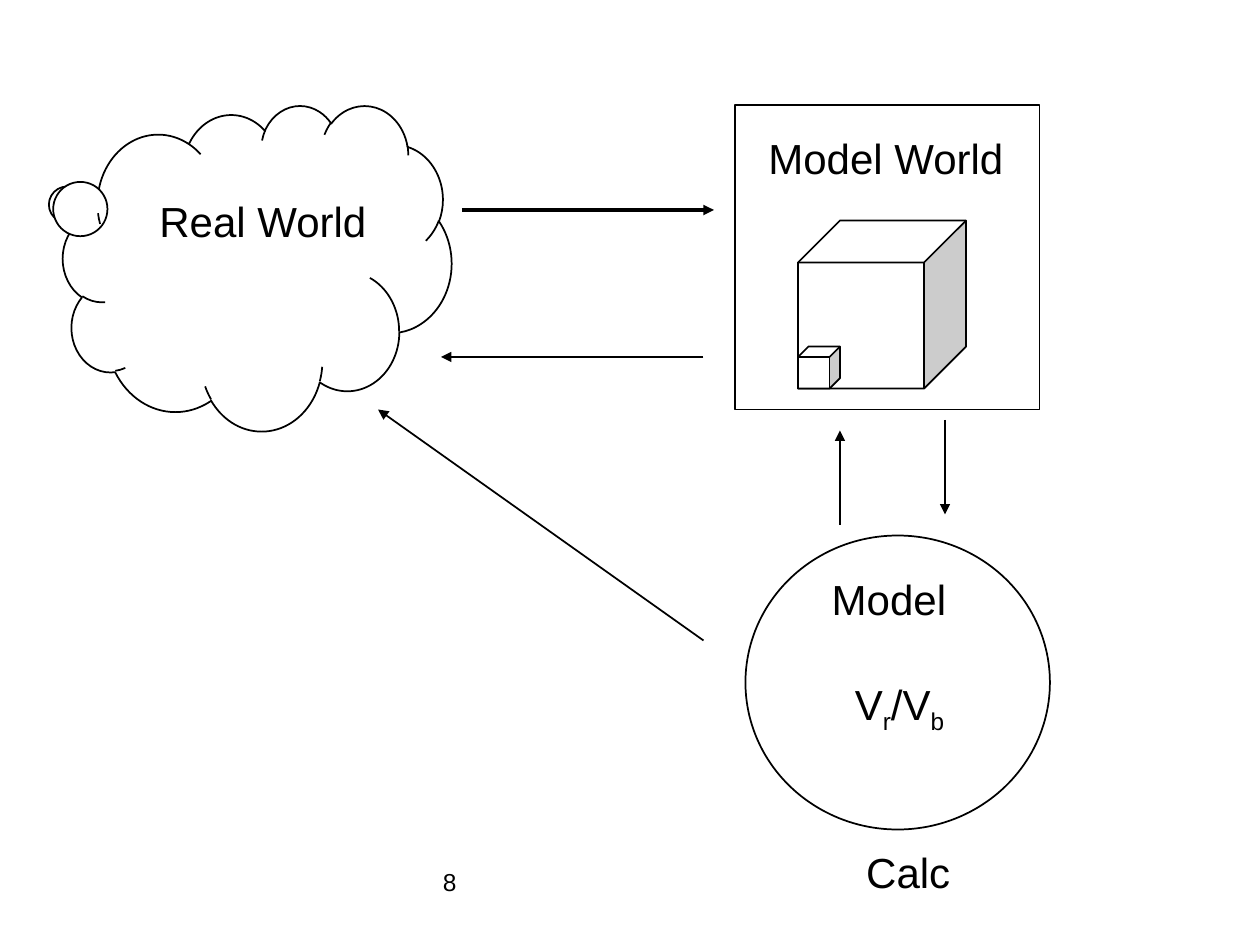
import pptx
import pptx.util
import pptx.dml.color
import pptx.enum.shapes
import pptx.enum.text
import pptx.oxml.ns
import lxml.etree

Pt = pptx.util.Pt
MSO = pptx.enum.shapes.MSO_SHAPE
ALIGN = pptx.enum.text.PP_ALIGN
BLACK = pptx.dml.color.RGBColor(0, 0, 0)
WHITE = pptx.dml.color.RGBColor(255, 255, 255)

prs = pptx.Presentation()
prs.slide_width, prs.slide_height = Pt(720), Pt(540)
s = prs.slides.add_slide(prs.slide_layouts[6])


def add_text(text, x, y, w, h=36, size=24, align=ALIGN.LEFT, wrap=False):
    """Add a text box; each character after an underscore is a subscript."""
    tf = s.shapes.add_textbox(Pt(x), Pt(y), Pt(w), Pt(h)).text_frame
    tf.word_wrap = wrap
    p = tf.paragraphs[0]
    p.alignment = align
    first, *rest = text.split("_")
    runs = [(first, False)]
    for part in rest:
        runs += [(part[0], True), (part[1:], False)]
    for content, subscript in runs:
        if not content:
            continue
        r = p.add_run()
        r.text = content
        r.font.name = "Arial"
        r.font.size = Pt(size)
        r.font.color.rgb = BLACK
        if subscript:
            r.font._element.set("baseline", "-25000")


# Outlined shapes: cloud, model box, large and small cube, model circle
for kind, x, y, w, h, adjustments in [
    (MSO.CLOUD_CALLOUT, 36, 60, 222, 186, (-0.48, -0.19)),
    (MSO.RECTANGLE, 420, 60, 174, 174, ()),
    (MSO.CUBE, 456, 126, 96, 96, (0.25,)),
    (MSO.CUBE, 456, 198, 24, 24, (0.25,)),
    (MSO.OVAL, 426, 306, 174, 168, ()),
]:
    sp = s.shapes.add_shape(kind, Pt(x), Pt(y), Pt(w), Pt(h))
    sp.shadow.inherit = False
    sp.fill.solid()
    sp.fill.fore_color.rgb = WHITE
    sp.line.color.rgb = BLACK
    sp.line.width = Pt(1)
    for i, value in enumerate(adjustments):
        sp.adjustments[i] = value

# Arrows between the worlds and the model
for x1, y1, x2, y2, width in [
    (264, 120, 408, 120, 2),
    (402, 204, 252, 204, 1),
    (540, 240, 540, 294, 1),
    (480, 300, 480, 246, 1),
    (402, 366, 216, 234, 1),
]:
    arrow = s.shapes.add_connector(
        pptx.enum.shapes.MSO_CONNECTOR.STRAIGHT, Pt(x1), Pt(y1), Pt(x2), Pt(y2))
    arrow.line.color.rgb = BLACK
    arrow.line.width = Pt(width)
    qn = pptx.oxml.ns.qn
    lxml.etree.SubElement(arrow.line._get_or_add_ln(), qn("a:tailEnd"), type="triangle")
    lxml.etree.SubElement(arrow._element.spPr, qn("a:effectLst"))

# Labels
add_text("Real World", 84, 108, 133)
add_text("Model World", 432, 72, 149)
add_text("Model", 468, 324, 80, align=ALIGN.CENTER)
add_text("V_r/V_b", 480, 384, 68, align=ALIGN.CENTER)
add_text("Calc", 462, 480, 114, align=ALIGN.CENTER, wrap=True)

# Slide number
add_text("8", 246, 492, 228, size=14, wrap=True)

prs.save("out.pptx")
